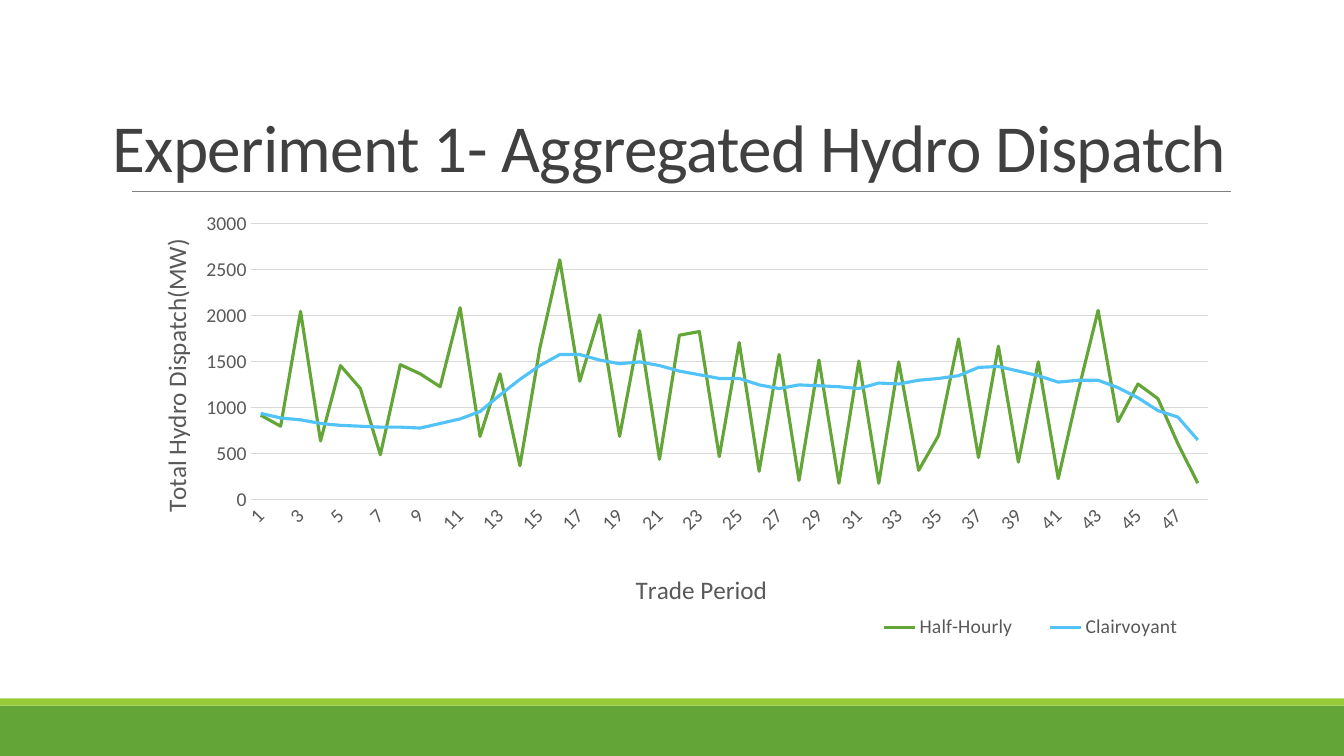
from dataclasses import dataclass

from lxml import etree
from pptx import Presentation
from pptx import util as u
from pptx.chart.data import CategoryChartData
from pptx.dml.color import RGBColor
from pptx.enum import chart as ch, shapes, text
from pptx.oxml.ns import qn

HALF = [920, 800, 2050, 640, 1460, 1210, 490, 1470, 1370, 1230, 2090, 690,
        1370, 370, 1650, 2610, 1290, 2010, 690, 1840, 440, 1790, 1830, 470,
        1710, 310, 1580, 210, 1520, 180, 1510, 180, 1500, 320, 700, 1750,
        460, 1670, 410, 1500, 230, 1180, 2060, 850, 1260, 1100, 610, 180]
CLAIR = [940, 890, 870, 830, 810, 800, 790, 790, 780, 830, 880, 960,
         1140, 1310, 1460, 1580, 1580, 1520, 1480, 1500, 1460, 1400, 1360, 1320,
         1320, 1250, 1210, 1250, 1240, 1230, 1210, 1270, 1260, 1300, 1320, 1350,
         1440, 1450, 1400, 1350, 1280, 1300, 1300, 1220, 1110, 970, 900, 650]


@dataclass
class Theme:
    font: str = "Calibri"
    green: str = "63A537"
    lime: str = "99CB38"
    blue: str = "51C3F9"
    rule: str = "808080"
    grid: str = "D9D9D9"
    dark: str = "404040"
    grey: str = "595959"
    head: float = 48
    label: float = 18
    tick: float = 14


def place(node, index, **parts):
    """Give a chart part a manual layout, in fractions of the chart."""
    for old in node.findall(qn("c:layout")):
        node.remove(old)
    layout = etree.Element(qn("c:layout"))
    node.insert(index, layout)
    manual = etree.SubElement(layout, qn("c:manualLayout"))
    for key, val in parts.items():
        etree.SubElement(manual, qn("c:" + key)).set("val", str(val))


class Deck:
    """Holds the theme and the current slide."""

    def __init__(self, theme):
        self.theme = theme
        self.prs = Presentation()
        self.prs.slide_width = u.Inches(13.33)
        self.prs.slide_height = u.Inches(7.5)
        self.slide = self.prs.slides.add_slide(self.prs.slide_layouts[6])

    def style(self, font, size, color):
        font.name = self.theme.font
        font.size = u.Pt(size)
        font.bold = False
        font.color.rgb = RGBColor.from_string(color)

    def stroke(self, line, color, width):
        line.color.rgb = RGBColor.from_string(color)
        line.width = u.Pt(width)

    def band(self, top, height, color):
        box = self.slide.shapes.add_shape(
            shapes.MSO_SHAPE.RECTANGLE, 0, u.Inches(top),
            self.prs.slide_width, u.Inches(height))
        box.shadow.inherit = False
        box.fill.solid()
        box.fill.fore_color.rgb = RGBColor.from_string(color)
        box.line.fill.background()

    def rule(self, left, right, top):
        line = self.slide.shapes.add_connector(
            shapes.MSO_CONNECTOR.STRAIGHT, u.Inches(left), u.Inches(top),
            u.Inches(right), u.Inches(top))
        self.stroke(line.line, self.theme.rule, 0.5)
        etree.SubElement(line._element.spPr, qn("a:effectLst"))

    def title(self, words, *at):
        frame = self.slide.shapes.add_textbox(*map(u.Inches, at)).text_frame
        frame.word_wrap = True
        frame.vertical_anchor = text.MSO_ANCHOR.BOTTOM
        para = frame.paragraphs[0]
        para.line_spacing = 0.85
        run = para.add_run()
        run.text = words
        self.style(run.font, self.theme.head, self.theme.dark)
        run.font._element.set("spc", "-50")

    def axis(self, axis, words, turn, x, y):
        """Style an axis and put its title, turned by degrees, at x and y."""
        axis.major_tick_mark = axis.minor_tick_mark = ch.XL_TICK_MARK.NONE
        self.style(axis.tick_labels.font, self.theme.tick, self.theme.grey)
        frame = axis.axis_title.text_frame
        run = frame.paragraphs[0].add_run()
        run.text = words
        self.style(run.font, self.theme.label, self.theme.grey)
        body = frame._txBody.find(qn("a:bodyPr"))
        body.set("rot", str(turn * 60000))
        body.set("vert", "horz")
        place(axis.axis_title._element, 1, xMode="edge", yMode="edge", x=x, y=y)

    def chart(self, series, *at):
        """Draw a line chart from (name, values, color) rows."""
        data = CategoryChartData()
        data.categories = [str(n + 1) for n in range(len(series[0][1]))]
        for name, vals, _ in series:
            data.add_series(name, vals)
        chart = self.slide.shapes.add_chart(
            ch.XL_CHART_TYPE.LINE, *map(u.Inches, at), data).chart
        chart.has_title = False
        self.style(chart.font, self.theme.tick, self.theme.grey)
        chart.plots[0].vary_by_categories = False
        for line, (_, _, color) in zip(chart.plots[0].series, series):
            line.smooth = False
            line.marker.style = ch.XL_MARKER_STYLE.NONE
            self.stroke(line.format.line, color, 2.25)

        cat, val = chart.category_axis, chart.value_axis
        self.axis(cat, "Trade Period", 0, 0.46, 0.82)
        self.axis(val, "Total Hydro Dispatch(MW)", -90, 0.03, 0.07)
        self.stroke(cat.format.line, self.theme.grid, 0.75)
        self.stroke(val.major_gridlines.format.line, self.theme.grid, 0.75)
        val.format.line.fill.background()
        val.minimum_scale, val.maximum_scale, val.major_unit = 0, 3000, 500
        node = cat._element
        node.find(qn("c:txPr")).find(qn("a:bodyPr")).set("rot", "-2700000")
        skip = etree.Element(qn("c:tickLblSkip"))
        skip.set("val", "2")
        node.find(qn("c:noMultiLvlLbl")).addprevious(skip)

        chart.has_legend = True
        key = chart.legend
        key.position = ch.XL_LEGEND_POSITION.BOTTOM
        key.include_in_layout = False
        self.style(key.font, self.theme.tick, self.theme.grey)
        place(key._element, 1, xMode="edge", yMode="edge",
              x=0.66, y=0.91, w=0.32, h=0.09)
        plot = chart._chartSpace.find(".//" + qn("c:plotArea"))
        place(plot, 0, layoutTarget="inner", xMode="edge", yMode="edge",
              x=0.117, y=0.046, w=0.863, h=0.622)


def main():
    look = Theme()
    deck = Deck(look)
    deck.band(7, 0.5, look.green)
    deck.band(6.93, 0.07, look.lime)
    deck.rule(1.31, 12.21, 1.9)
    deck.title("Experiment 1- Aggregated Hydro Dispatch", 1.02, 0.31, 11.3, 1.59)
    deck.chart([("Half-Hourly", HALF, look.green),
                ("Clairvoyant", CLAIR, look.blue)], 1.2, 2.02, 11, 4.4)
    deck.prs.save("out.pptx")


if __name__ == "__main__":
    main()
